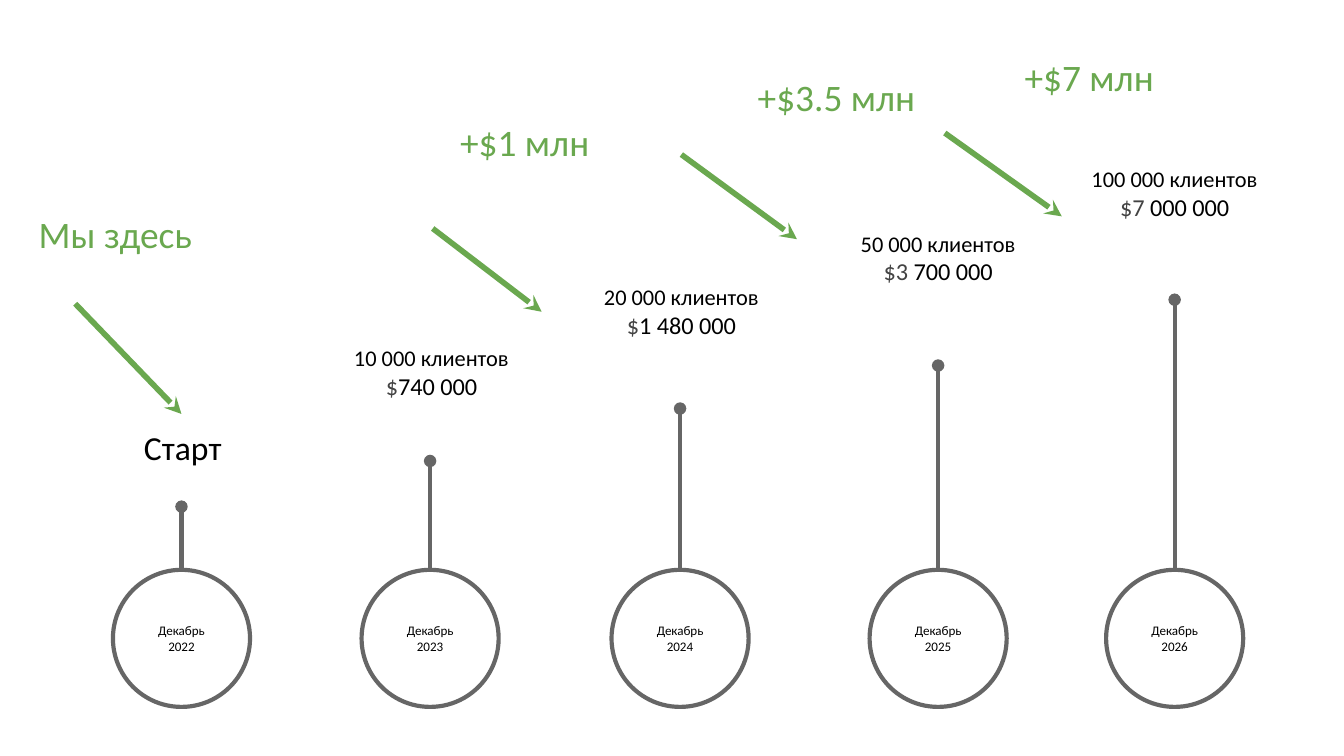
from lxml import etree
from pptx import Presentation
from pptx import util as u
from pptx.dml.color import RGBColor
from pptx.enum import shapes, text
from pptx.oxml import ns

COLORS = {"gray": "666666", "green": "6AA84F", "black": "000000", "dark": "434343"}
DIAMETER, CIRCLE_TOP = 1.02, 4.24


def add_text(paragraph, content, size=12, color="black", font="Calibri"):
    run = paragraph.add_run()
    run.text = content
    run.font.size = u.Pt(size)
    run.font.name = font
    run.font.color.rgb = RGBColor.from_string(COLORS[color])


class Roadmap:
    """Draws the growth roadmap elements on one slide in a shared style."""

    def __init__(self, slide):
        self.shapes = slide.shapes

    def stroke(self, line, color, width):
        line.color.rgb = RGBColor.from_string(COLORS[color])
        line.width = u.Pt(width)

    def frame(self, shape, anchor):
        frame = shape.text_frame
        frame.word_wrap = True
        frame.vertical_anchor = anchor
        frame.margin_left = frame.margin_right = u.Inches(0.1)
        frame.margin_top = frame.margin_bottom = u.Inches(0.1)
        return frame

    def date(self, left, month, year):
        circle = self.shapes.add_shape(
            shapes.MSO_SHAPE.OVAL, u.Inches(left), u.Inches(CIRCLE_TOP),
            u.Inches(DIAMETER), u.Inches(DIAMETER))
        circle.shadow.inherit = False
        circle.fill.background()
        self.stroke(circle.line, "gray", 2.25)
        frame = self.frame(circle, text.MSO_ANCHOR.MIDDLE)
        for paragraph, content in ((frame.paragraphs[0], month),
                                   (frame.add_paragraph(), year)):
            paragraph.alignment = text.PP_ALIGN.CENTER
            add_text(paragraph, content, size=7)
        return circle

    def line(self, start, end, color, width, tip, kind):
        line = self.shapes.add_connector(
            shapes.MSO_CONNECTOR.STRAIGHT, *map(u.Inches, start + end))
        self.stroke(line.line, color, width)
        etree.SubElement(line.line._get_or_add_ln(), ns.qn(f"a:{tip}"), type=kind)
        etree.SubElement(line._element.spPr, ns.qn("a:effectLst"))
        return line

    def pin(self, x, top, circle):
        pin = self.line((x, top), (x, CIRCLE_TOP), "gray", 2.25, "headEnd", "oval")
        pin.end_connect(circle, 0)

    def arrow(self, start, end):
        self.line(start, end, "green", 3, "tailEnd", "stealth")

    def label(self, box, align=text.PP_ALIGN.CENTER):
        shape = self.shapes.add_textbox(*map(u.Inches, box))
        paragraph = self.frame(shape, text.MSO_ANCHOR.TOP).paragraphs[0]
        paragraph.alignment = align
        return paragraph

    def target(self, box, clients, prefix, amount):
        paragraph = self.label(box)
        add_text(paragraph, f"{clients} клиентов")
        paragraph.add_line_break()
        add_text(paragraph, prefix, size=13, color="dark")
        add_text(paragraph, amount, size=13)

    def gain(self, box, content, align=text.PP_ALIGN.CENTER):
        add_text(self.label(box, align), content, size=20, color="green")


def main():
    deck = Presentation()
    deck.slide_width, deck.slide_height = u.Inches(10), u.Inches(10) * 9 // 16
    roadmap = Roadmap(deck.slides.add_slide(deck.slide_layouts[6]))

    milestones = [(0.84, 3.77), (2.69, 3.43), (4.55, 3.04), (6.47, 2.72), (8.23, 2.23)]
    for year, (left, pin_top) in enumerate(milestones, 2022):
        circle = roadmap.date(left, "Декабрь", str(year))
        roadmap.pin(left + DIAMETER / 2, pin_top, circle)

    add_text(roadmap.label((0.72, 3.08, 1.28, 0.45)), "Старт", size=18)
    for target in [
        ((2.17, 2.46, 2.08, 0.62), "10 000", "$", "740 000"),
        ((4.03, 2.01, 2.08, 0.62), "20 000", "$", "1 480 000"),
        ((5.94, 1.61, 2.08, 0.62), "50 000", "$3 ", "700 000"),
        ((7.66, 1.13, 2.16, 0.68), "100 000", "$7 ", "000 000"),
    ]:
        roadmap.target(*target)

    for start, end in [((0.56, 2.26), (1.35, 3.08)), ((3.22, 1.7), (4.03, 2.32)),
                       ((5.07, 1.15), (5.93, 1.78)), ((7.03, 0.99), (7.9, 1.61))]:
        roadmap.arrow(start, end)

    roadmap.gain((0.19, 1.47, 1.73, 0.62), "Мы здесь", text.PP_ALIGN.LEFT)
    for left, top, width, content in [(3.04, 0.79, 1.73, "+$1 млн"),
                                      (5.26, 0.45, 1.93, "+$3.5 млн"),
                                      (7.14, 0.3, 1.93, "+$7 млн")]:
        roadmap.gain((left, top, width, 0.62), content)

    deck.save("out.pptx")


if __name__ == "__main__":
    main()
